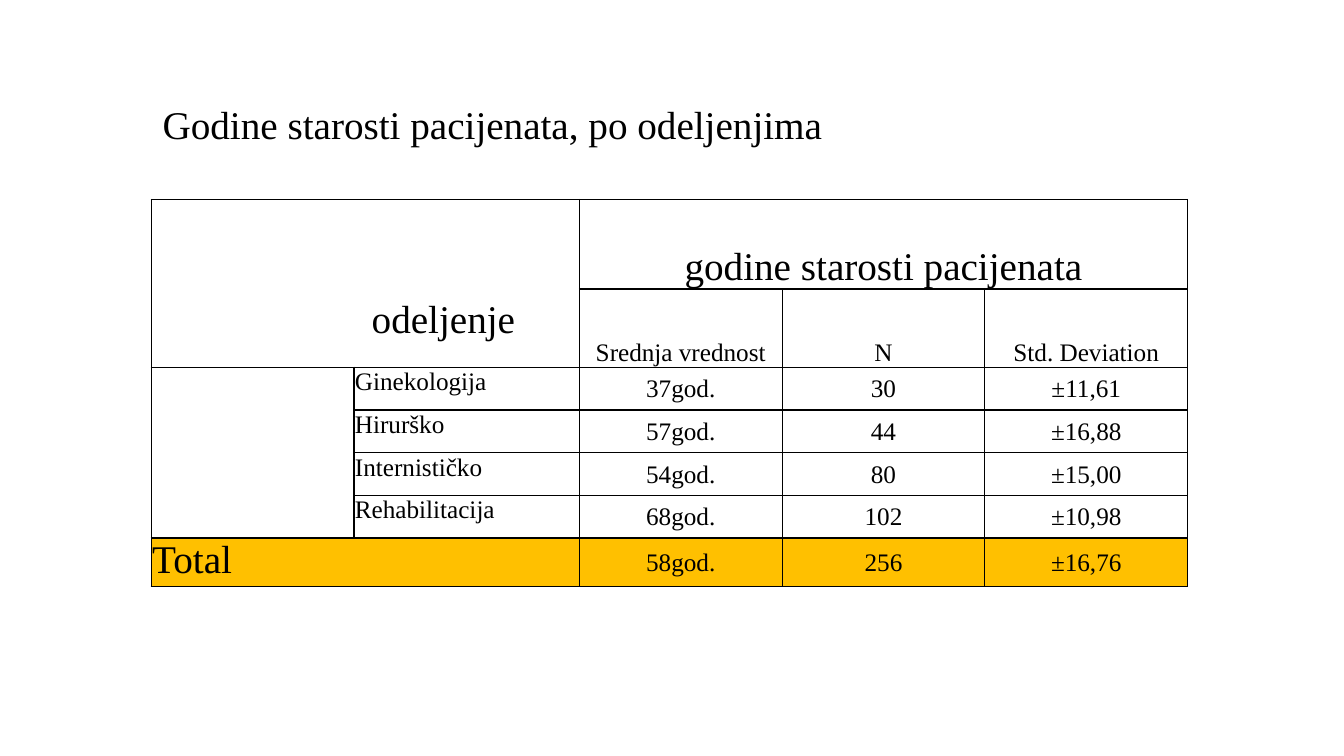
import pptx
import pptx.dml.color
import pptx.enum.text
import pptx.oxml
import pptx.oxml.ns
import pptx.util

Pt = pptx.util.Pt
Align = pptx.enum.text.PP_ALIGN
Anchor = pptx.enum.text.MSO_ANCHOR

TITLE = "Godine starosti pacijenata, po odeljenjima"
ROWS = [
    ("odeljenje", "", "godine starosti pacijenata", "", ""),
    ("", "", "Srednja vrednost", "N", "Std. Deviation"),
    ("", "Ginekologija", "37god.", "30", "±11,61"),
    ("", "Hirurško", "57god.", "44", "±16,88"),
    ("", "Internističko", "54god.", "80", "±15,00"),
    ("", "Rehabilitacija", "68god.", "102", "±10,98"),
    ("Total", "", "58god.", "256", "±16,76"),
]
MERGES = [((0, 0), (1, 1)), ((0, 2), (0, 4)), ((2, 0), (5, 0)), ((6, 0), (6, 1))]
LARGE_TEXTS = ("odeljenje", "godine starosti pacijenata", "Total")
HEADER_ROWS = 2
LABEL_COLUMNS = 2
TOTAL_ROW = len(ROWS) - 1
ROW_HEIGHTS = [64, 56] + [30.5] * 4 + [34.4]
COLUMN_WIDTH = 144.85
TABLE_LEFT, TABLE_TOP = 108, 142.4
FONT = "Times New Roman"
BLACK, GOLD = "000000", "FFC000"


def color(value):
    return pptx.dml.color.RGBColor.from_string(value)


def format_text(text_frame, size, alignment):
    for paragraph in text_frame.paragraphs:
        paragraph.alignment = alignment
        paragraph.font.size = Pt(size)
        for run in paragraph.runs:
            run.font.name = FONT
            run.font.size = Pt(size)
            run.font.color.rgb = color(BLACK)


def add_borders(cell):
    properties = cell._tc.get_or_add_tcPr()
    for side in ("lnL", "lnR", "lnT", "lnB"):
        properties.append(pptx.oxml.parse_xml(
            f'<a:{side} {pptx.oxml.ns.nsdecls("a")} w="{Pt(1)}"><a:solidFill>'
            f'<a:srgbClr val="{BLACK}"/></a:solidFill></a:{side}>'))


def format_cell(cell, row, column, text):
    add_borders(cell)
    if row == TOTAL_ROW:
        cell.fill.solid()
        cell.fill.fore_color.rgb = color(GOLD)
    else:
        cell.fill.background()
    cell.margin_left = cell.margin_right = cell.margin_top = Pt(0.72)
    cell.margin_bottom = Pt(0)
    if row < HEADER_ROWS:
        cell.vertical_anchor = Anchor.BOTTOM
    elif column < LABEL_COLUMNS:
        cell.vertical_anchor = Anchor.TOP
    else:
        cell.vertical_anchor = Anchor.MIDDLE
    cell.text_frame.text = text
    size = 28 if text in LARGE_TEXTS else 18
    format_text(cell.text_frame, size, Align.LEFT if column < LABEL_COLUMNS else Align.CENTER)


def add_title(slide):
    title = slide.shapes.title
    title.left, title.top, title.width, title.height = Pt(106.6), Pt(67.7), Pt(490.3), Pt(41)
    title.text_frame.text = TITLE
    title.text_frame.word_wrap = False
    title.text_frame.vertical_anchor = Anchor.MIDDLE
    format_text(title.text_frame, 28, Align.CENTER)


def add_age_table(slide):
    column_count = len(ROWS[0])
    table = slide.shapes.add_table(
        len(ROWS), column_count, Pt(TABLE_LEFT), Pt(TABLE_TOP),
        Pt(COLUMN_WIDTH * column_count), Pt(sum(ROW_HEIGHTS))).table
    table.first_row = table.horz_banding = False
    for table_column in table.columns:
        table_column.width = Pt(COLUMN_WIDTH)
    for table_row, height in zip(table.rows, ROW_HEIGHTS):
        table_row.height = Pt(height)
    for row, texts in enumerate(ROWS):
        for column, text in enumerate(texts):
            format_cell(table.cell(row, column), row, column, text)
    for first, last in MERGES:
        table.cell(*first).merge(table.cell(*last))
    department_header = table.cell(0, 0)
    department_header.margin_left = Pt(157.5)
    department_header.margin_bottom = Pt(18)


def main():
    presentation = pptx.Presentation()
    presentation.slide_width, presentation.slide_height = Pt(960), Pt(540)
    slide = presentation.slides.add_slide(presentation.slide_layouts[5])
    add_age_table(slide)
    add_title(slide)
    presentation.save("out.pptx")


if __name__ == "__main__":
    main()
